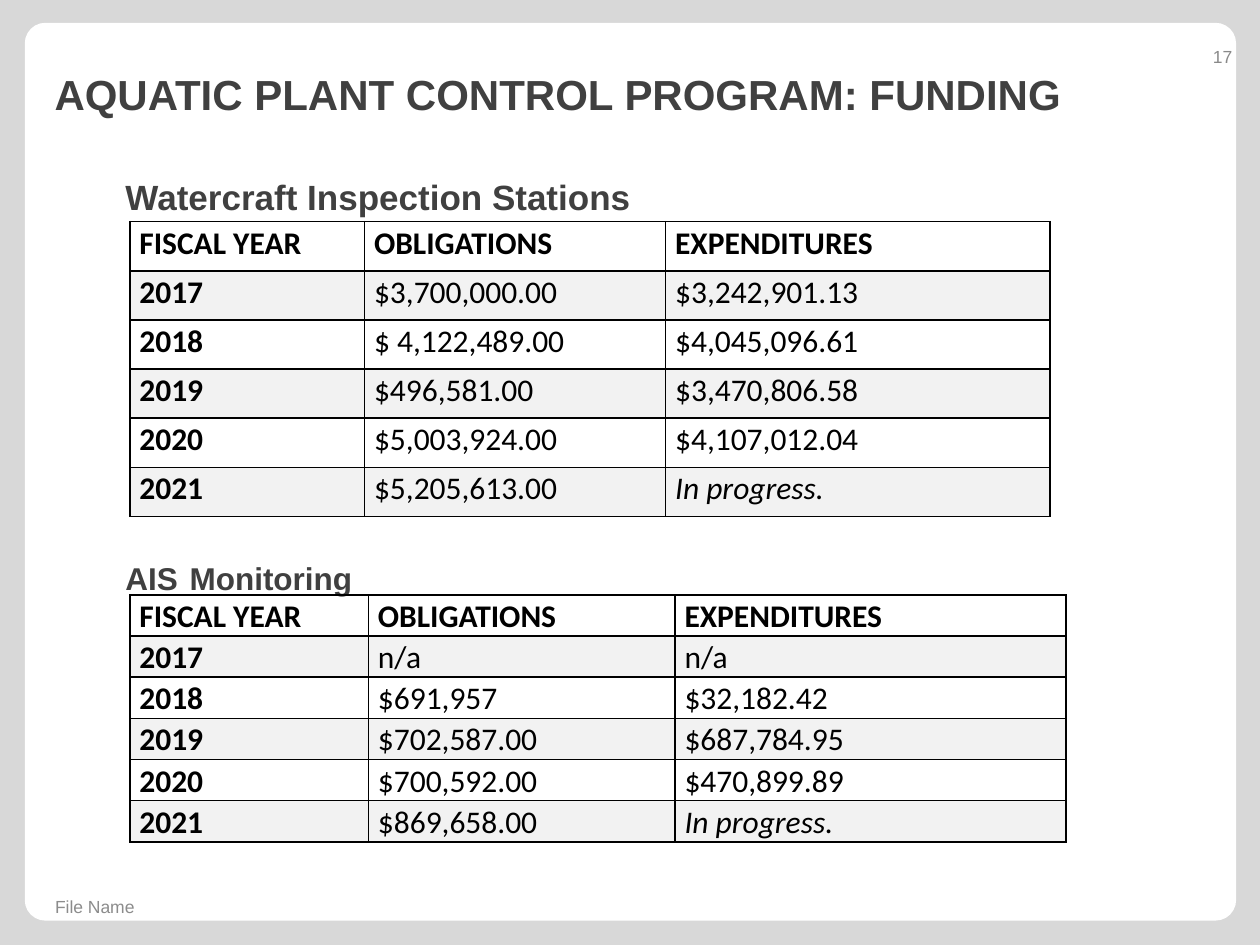
from dataclasses import dataclass

from lxml import etree
from pptx import Presentation
from pptx.dml.color import RGBColor
from pptx.enum.shapes import MSO_SHAPE
from pptx.enum.text import MSO_ANCHOR, PP_ALIGN
from pptx.oxml.ns import qn
from pptx.util import Cm, Pt

ROUNDED = MSO_SHAPE.ROUNDED_RECTANGLE
TOP, MIDDLE = MSO_ANCHOR.TOP, MSO_ANCHOR.MIDDLE
LEFT, RIGHT = PP_ALIGN.LEFT, PP_ALIGN.RIGHT


@dataclass(frozen=True)
class Theme:
    backdrop: str = "D8D8D8"
    panel: str = "FFFFFF"
    band: str = "F2F2F2"
    heading: str = "404040"
    footer: str = "8C8C8C"
    number: str = "898989"
    ink: str = "000000"
    head_font: str = "Arial"
    table_font: str = "Calibri"
    title_size: int = 24
    section_size: int = 20
    body_size: int = 18
    small_size: int = 10
    border: int = 1


def write(p, text, *, size, color, font, bold=False, italic=False,
          align=LEFT, before=0, spacing=None):
    """Add one run of text to a paragraph and set the paragraph's format."""
    p.alignment = align
    p.space_before = Pt(before)
    if spacing:
        p.line_spacing = spacing
    r = p.add_run()
    r.text = text
    r.font.size, r.font.name = Pt(size), font
    r.font.bold, r.font.italic = bold, italic
    r.font.color.rgb = RGBColor.from_string(color)


class SlideBuilder:
    def __init__(self, slide, theme):
        self.s, self.theme = slide, theme

    def paint(self, fill, color):
        fill.solid()
        fill.fore_color.rgb = RGBColor.from_string(color)

    def background(self):
        self.paint(self.s.background.fill, self.theme.backdrop)

    def panel(self, x, y, w, h, radius):
        sp = self.s.shapes.add_shape(ROUNDED, Cm(x), Cm(y), Cm(w), Cm(h))
        sp.adjustments[0] = radius
        sp.shadow.inherit = False
        self.paint(sp.fill, self.theme.panel)
        sp.line.fill.background()

    def text_frame(self, x, y, w, h, anchor=MIDDLE, inset=0.25):
        tf = self.s.shapes.add_textbox(Cm(x), Cm(y), Cm(w), Cm(h)).text_frame
        tf.word_wrap = True
        tf.vertical_anchor = anchor
        tf.margin_left = Cm(inset)
        return tf

    def label(self, x, y, w, h, text, **style):
        p = self.text_frame(x, y, w, h).paragraphs[0]
        write(p, text, font=self.theme.head_font, **style)

    def borders(self, cell):
        tc_pr = cell._tc.get_or_add_tcPr()
        for side in ("a:lnL", "a:lnR", "a:lnT", "a:lnB"):
            ln = etree.SubElement(tc_pr, qn(side), w=str(Pt(self.theme.border)))
            fill = etree.SubElement(ln, qn("a:solidFill"))
            etree.SubElement(fill, qn("a:srgbClr"), val=self.theme.ink)

    def table(self, x, y, widths, row_height, rows):
        t = self.theme
        frame = self.s.shapes.add_table(len(rows), len(widths), Cm(x), Cm(y),
                                        Cm(sum(widths)), Cm(row_height * len(rows)))
        table = frame.table
        table.first_row = table.horz_banding = False
        for column, width in zip(table.columns, widths):
            column.width = Cm(width)
        for i, values in enumerate(rows):
            table.rows[i].height = Cm(row_height)
            for j, value in enumerate(values):
                cell = table.cell(i, j)
                cell.margin_left = cell.margin_right = Cm(0.19)
                cell.margin_top = cell.margin_bottom = 0
                self.borders(cell)
                if i % 2:
                    self.paint(cell.fill, t.band)
                else:
                    cell.fill.background()
                write(cell.text_frame.paragraphs[0], value, size=t.body_size,
                      color=t.ink, font=t.table_font, bold=i == 0 or j == 0,
                      italic=value == IN_PROGRESS, spacing=1.07)


IN_PROGRESS = "In progress."
HEADER = ("FISCAL YEAR", "OBLIGATIONS", "EXPENDITURES")
INSPECTION = [
    HEADER,
    ("2017", "$3,700,000.00", "$3,242,901.13"),
    ("2018", "$ 4,122,489.00", "$4,045,096.61"),
    ("2019", "$496,581.00", "$3,470,806.58"),
    ("2020", "$5,003,924.00", "$4,107,012.04"),
    ("2021", "$5,205,613.00", IN_PROGRESS),
]
MONITORING = [
    HEADER,
    ("2017", "n/a", "n/a"),
    ("2018", "$691,957", "$32,182.42"),
    ("2019", "$702,587.00", "$687,784.95"),
    ("2020", "$700,592.00", "$470,899.89"),
    ("2021", "$869,658.00", IN_PROGRESS),
]


def main():
    prs = Presentation()
    prs.slide_width, prs.slide_height = Cm(25.4), Cm(19.05)
    theme = Theme()
    b = SlideBuilder(prs.slides.add_slide(prs.slide_layouts[6]), theme)

    # Backdrop and white panel
    b.background()
    b.panel(0.5, 0.46, 24.42, 18.1, 0.023)

    # Title
    b.label(0.85, 0.76, 23.3, 2.24, "AQUATIC PLANT CONTROL PROGRAM: FUNDING",
            size=theme.title_size, color=theme.heading, bold=True)

    # Section headings, the second set just above its table
    tf = b.text_frame(0.85, 3.42, 23.3, 14.38, anchor=TOP, inset=1.68)
    style = dict(color=theme.heading, font=theme.head_font, bold=True)
    write(tf.paragraphs[0], "Watercraft Inspection Stations",
          size=theme.section_size, **style)
    p = tf.add_paragraph()
    for text, size in (("AIS", theme.body_size), (" ", theme.title_size),
                       ("Monitoring", theme.body_size)):
        write(p, text, size=size, before=189, **style)

    # Funding tables
    b.table(2.62, 4.47, (4.73, 6.07, 7.75), 0.99, INSPECTION)
    b.table(2.62, 11.99, (4.81, 6.18, 7.88), 0.83, MONITORING)

    # Footer and slide number
    b.label(0.86, 17.98, 8.05, 0.61, "File Name",
            size=theme.small_size, color=theme.footer)
    b.label(23.06, 0.64, 2.03, 1.02, "17",
            size=theme.small_size, color=theme.number, align=RIGHT)

    prs.save("out.pptx")


if __name__ == "__main__":
    main()
